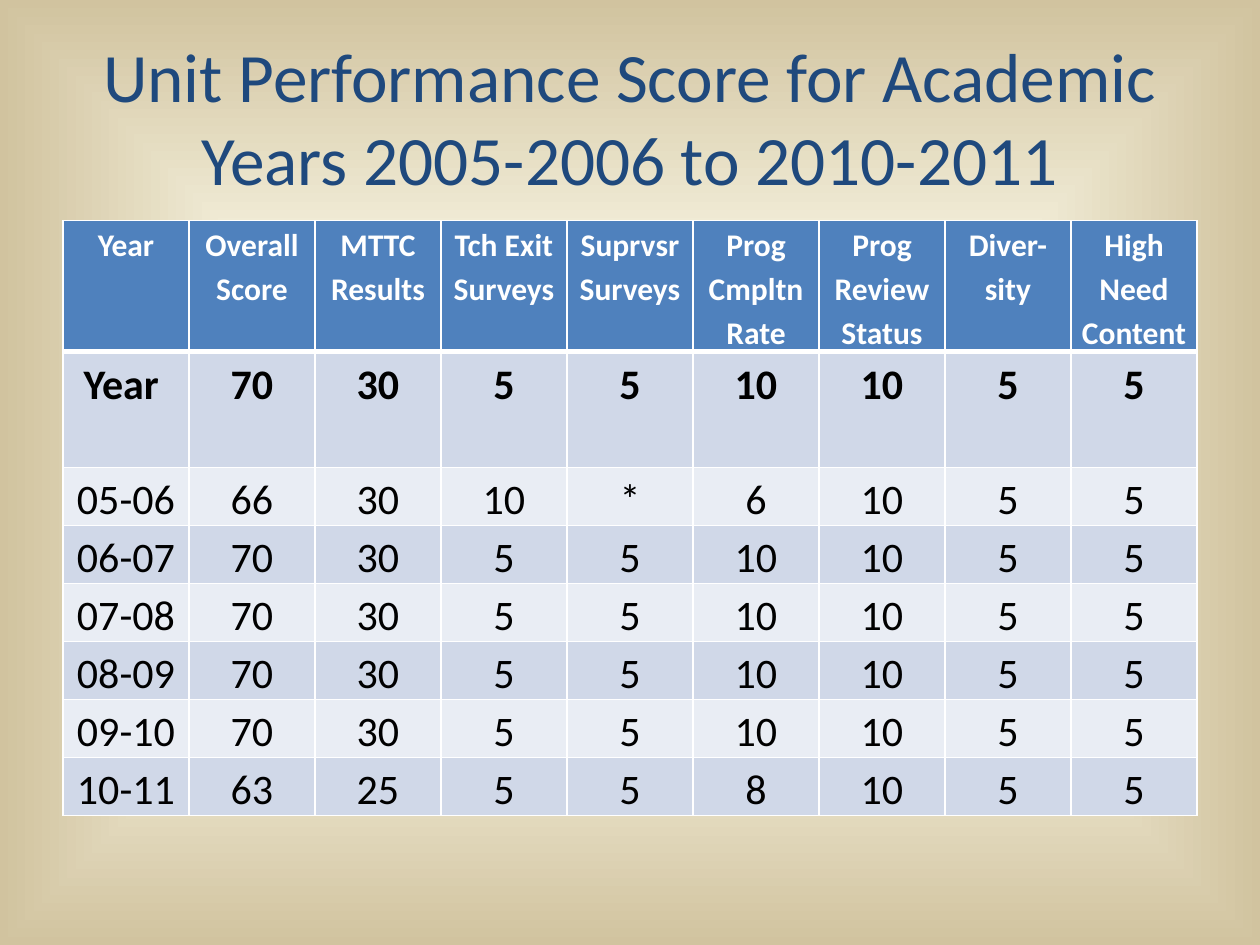
from dataclasses import dataclass

from lxml import etree
from pptx import Presentation
from pptx import util as u
from pptx.dml.color import RGBColor
from pptx.enum import text
from pptx.oxml import ns


@dataclass(frozen=True)
class Theme:
    font: str = "Calibri"
    title: str = "1F497D"
    header: str = "4F81BD"
    bands: tuple = ("D0D8E8", "E9EDF4")
    light: str = "FFFFFF"
    dark: str = "000000"
    background: tuple = ((0, "FFEFD1"), (52, "F0EBD5"), (100, "D1C39F"))
    title_size: float = 39.6
    header_size: int = 18
    body_size: int = 24


THEME = Theme()
NO_STYLE = "{2D5ABB26-0587-4C30-8999-92F81FD0307C}"

HEADERS = ["Year", "Overall Score", "MTTC Results", "Tch Exit Surveys", "Suprvsr Surveys",
           "Prog Cmpltn Rate", "Prog Review Status", "Diver-sity", "High Need Content"]
SCORES = [
    ["Year ", "70", "30", "5", "5", "10", "10", "5", "5"],
    ["05-06", "66", "30", "10", "*", "6", "10", "5", "5"],
    ["06-07", "70", "30", "5", "5", "10", "10", "5", "5"],
    ["07-08", "70", "30", "5", "5", "10", "10", "5", "5"],
    ["08-09", "70", "30", "5", "5", "10", "10", "5", "5"],
    ["09-10", "70", "30", "5", "5", "10", "10", "5", "5"],
    ["10-11", "63", "25", "5", "5", "8", "10", "5", "5"],
]
ROW_HEIGHTS = [1.04, 0.92] + [0.46] * 6
WIDE_SPACED_COLUMNS = {2, 3, 4, 5, 7}


def add_element(parent, tag, **attributes):
    return etree.SubElement(parent, ns.qn(tag), {k: str(v) for k, v in attributes.items()})


def paint_background(s):
    """Gradient spreading from the centre of the slide to its edges."""
    s.background.fill.gradient()
    grad = s.element.find(".//" + ns.qn("a:gradFill"))
    for child in list(grad):
        grad.remove(child)
    stops = add_element(grad, "a:gsLst")
    for percent, color in THEME.background:
        add_element(add_element(stops, "a:gs", pos=percent * 1000), "a:srgbClr", val=color)
    center = add_element(grad, "a:path", path="shape")
    add_element(center, "a:fillToRect", l=50000, t=50000, r=50000, b=50000)


def style_paragraph(p, size, color, bold=False):
    p.alignment = text.PP_ALIGN.CENTER
    p.font.name = THEME.font
    p.font.size = u.Pt(size)
    p.font.bold = bold
    p.font.color.rgb = RGBColor.from_string(color)


def add_title(s, left, top, width, height):
    tf = s.shapes.add_textbox(left, top, width, height).text_frame
    tf.word_wrap = True
    tf.vertical_anchor = text.MSO_ANCHOR.MIDDLE
    tf.text = "Unit Performance Score for Academic Years 2005-2006 to 2010-2011"
    style_paragraph(tf.paragraphs[0], THEME.title_size, THEME.title)


def set_borders(cell, bottom):
    """White cell borders; they come before the fill in the cell properties."""
    props = cell._tc.get_or_add_tcPr()
    for i, (side, points) in enumerate([("L", 1), ("R", 1), ("T", 1), ("B", bottom)]):
        line = add_element(props, f"a:ln{side}", w=u.Pt(points))
        add_element(add_element(line, "a:solidFill"), "a:srgbClr", val=THEME.light)
        props.insert(i, line)


def fill_cell(cell, value, row, column):
    is_header, is_target = row == 0, row == 1
    cell.margin_left = cell.margin_right = u.Inches(0.07)
    cell.margin_top = cell.margin_bottom = 0
    cell.fill.solid()
    color = THEME.header if is_header else THEME.bands[(row - 1) % 2]
    cell.fill.fore_color.rgb = RGBColor.from_string(color)
    set_borders(cell, bottom=3 if is_header else 1)

    cell.text = value
    p = cell.text_frame.paragraphs[0]
    p.line_spacing = 1.15
    p.space_before = u.Pt(0 if is_target else 5)
    p.space_after = u.Pt(10 if row < 2 and column in WIDE_SPACED_COLUMNS else 2.5)
    style_paragraph(p, THEME.header_size if is_header else THEME.body_size,
                    THEME.light if is_header else THEME.dark, bold=row < 2)


def add_score_table(s, left, top, width, height):
    rows = [HEADERS] + SCORES
    frame = s.shapes.add_table(len(rows), len(HEADERS), left, top, width, height)
    table = frame.table
    table.first_row = table.horz_banding = False
    table._tbl.tblPr.find(ns.qn("a:tableStyleId")).text = NO_STYLE
    for row, row_height in zip(table.rows, ROW_HEIGHTS):
        row.height = u.Inches(row_height)
    for i, values in enumerate(rows):
        for j, value in enumerate(values):
            fill_cell(table.cell(i, j), value, i, j)


def main():
    prs = Presentation()
    prs.slide_width, prs.slide_height = u.Inches(10), u.Inches(7.5)
    s = prs.slides.add_slide(prs.slide_layouts[6])
    paint_background(s)
    add_title(s, u.Inches(0.5), u.Inches(0.3), u.Inches(9), u.Inches(1.25))
    add_score_table(s, u.Inches(0.5), u.Inches(1.75), u.Inches(9), u.Inches(4.72))
    prs.save("out.pptx")


if __name__ == "__main__":
    main()
